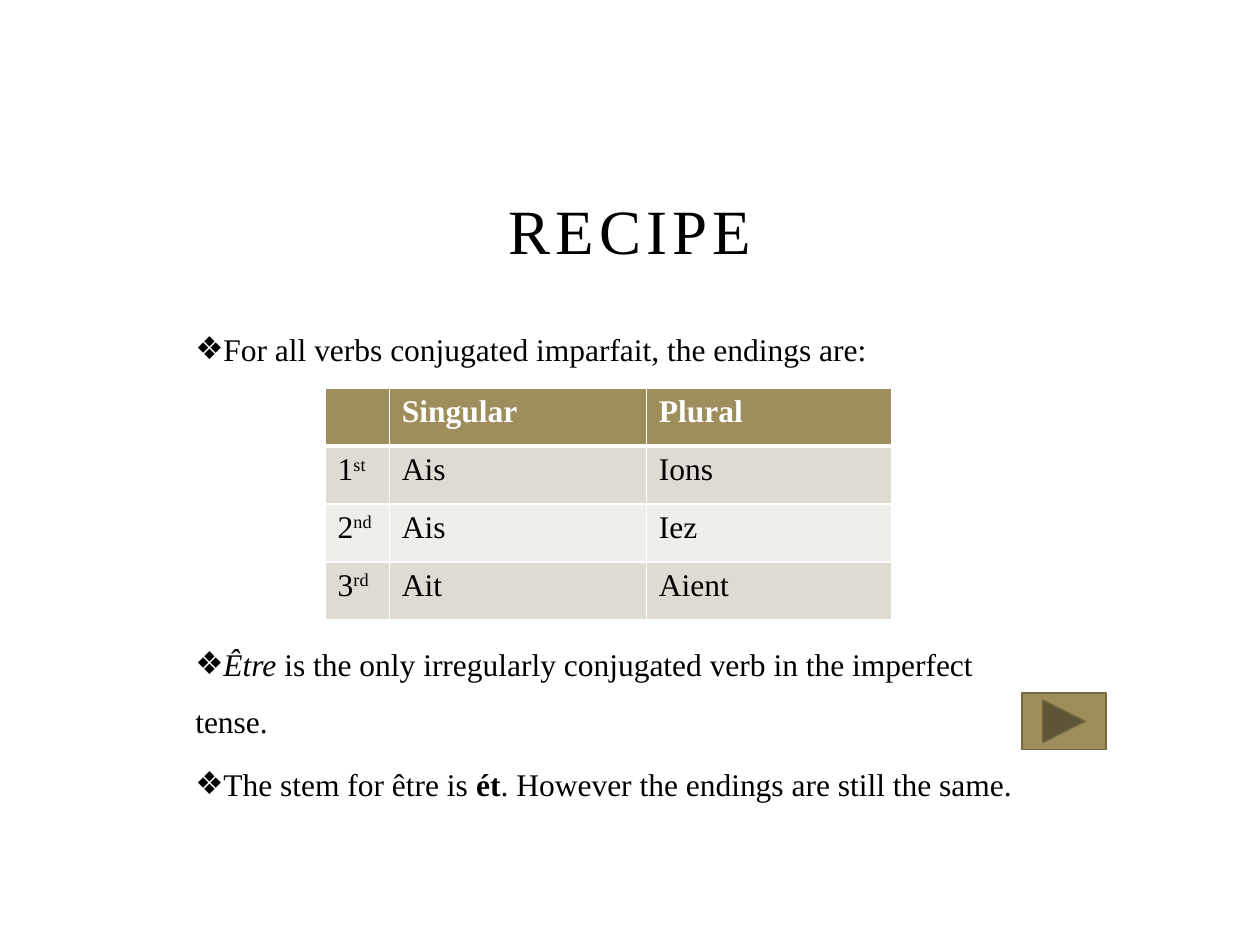
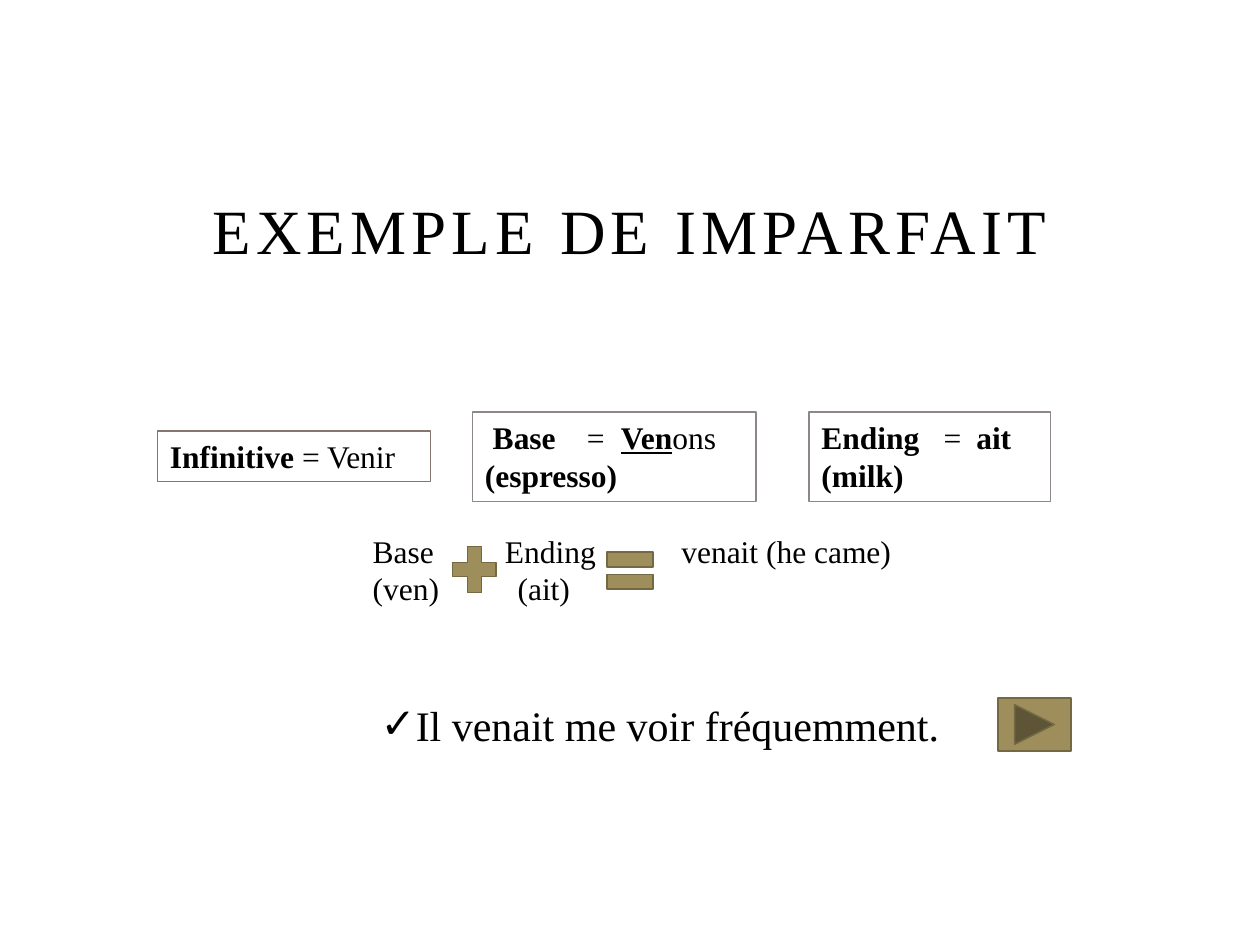
from lxml.etree import SubElement
from pptx import Presentation
from pptx.dml.color import RGBColor
from pptx.enum.shapes import MSO_SHAPE
from pptx.enum.text import MSO_ANCHOR, MSO_AUTO_SIZE, PP_ALIGN
from pptx.oxml.ns import qn
from pptx.util import Inches, Pt

COLORS = {
    "text": "000000", "white": "FFFFFF", "gold": "9E8E5C", "edge": "756944",
    "dark": "DFDBD2", "light": "F0EEEA", "gray": "8D878B", "brown": "85776D",
}
FONT = "Times New Roman"


def color(name):
    return RGBColor.from_string(COLORS[name])


def place(shape, left, top, width, height):
    shape.left, shape.top = Inches(left), Inches(top)
    shape.width, shape.height = Inches(width), Inches(height)


def write(para, runs, size=18, ink="text"):
    """Add (text, marks) runs; marks: b bold, i italic, u underline, ^ superscript."""
    for text, marks in runs:
        run = para.add_run()
        run.text = text
        font = run.font
        font.name, font.size = FONT, Pt(size)
        font.color.rgb = color(ink)
        font.bold, font.italic, font.underline = (m in marks for m in "biu")
        if "^" in marks:
            run._r.get_or_add_rPr().set("baseline", "30000")


def set_bullet(para, char, left, indent):
    props = para._p.get_or_add_pPr()
    props.set("marL", str(Inches(left)))
    props.set("indent", str(Inches(indent)))
    SubElement(props, qn("a:buChar"), char=char)


def set_tabs(para, stops):
    tabs = SubElement(para._p.get_or_add_pPr(), qn("a:tabLst"))
    for stop in stops:
        SubElement(tabs, qn("a:tab"), pos=str(Inches(stop)), algn="l")


def new_slide(prs, title):
    """Add a slide with its title and return it with the body placeholder."""
    slide = prs.slides.add_slide(prs.slide_layouts[1])
    head, body = slide.placeholders
    place(head, 1.5, 1.42, 7, 0.75)
    frame = head.text_frame
    frame.auto_size = MSO_AUTO_SIZE.NONE
    frame.vertical_anchor = MSO_ANCHOR.BOTTOM
    para = frame.paragraphs[0]
    para.alignment = PP_ALIGN.CENTER
    write(para, [(title, "")], 36)
    para.runs[0]._r.get_or_add_rPr().set("spc", "300")
    body.text_frame.auto_size = MSO_AUTO_SIZE.NONE
    return slide, body


def add_icon(slide, kind, *box):
    icon = slide.shapes.add_shape(kind, *map(Inches, box))
    icon.shadow.inherit = False
    icon.fill.solid()
    icon.fill.fore_color.rgb = color("gold")
    icon.line.color.rgb = color("edge")
    icon.line.width = Pt(0.85)


def fill_lines(shape, lines):
    """Write lines of (runs, tab stops) into a shape."""
    frame = shape.text_frame
    frame.word_wrap = True
    frame.auto_size = MSO_AUTO_SIZE.SHAPE_TO_FIT_TEXT
    frame.vertical_anchor = MSO_ANCHOR.TOP
    for row, (runs, stops) in enumerate(lines):
        para = frame.add_paragraph() if row else frame.paragraphs[0]
        para.alignment = PP_ALIGN.LEFT
        if stops:
            set_tabs(para, stops)
        write(para, runs)


def add_box(slide, box, edge, lines):
    shape = slide.shapes.add_shape(MSO_SHAPE.RECTANGLE, *map(Inches, box))
    shape.shadow.inherit = False
    shape.fill.background()
    shape.line.color.rgb = color(edge)
    shape.line.width = Pt(0.75)
    fill_lines(shape, lines)


def set_borders(cell, row):
    props = cell._tc.get_or_add_tcPr()
    widths = {"L": 1, "R": 1, "T": 3 if row == 1 else 1, "B": 3 if row == 0 else 1}
    for side, width in widths.items():
        line = SubElement(props, qn("a:ln" + side), w=str(Pt(width)))
        fill = SubElement(line, qn("a:solidFill"))
        SubElement(fill, qn("a:srgbClr"), val=COLORS["white"])


def add_endings(slide):
    rows = [
        [[], [("Singular", "b")], [("Plural", "b")]],
        [[("1", ""), ("st", "^")], [("Ais", "")], [("Ions", "")]],
        [[("2", ""), ("nd", "^")], [("Ais", "")], [("Iez", "")]],
        [[("3", ""), ("rd", "^")], [("Ait", "")], [("Aient", "")]],
    ]
    box = map(Inches, (2.58, 3.08, 4.5, 1.84))
    table = slide.shapes.add_table(4, 3, *box).table
    for col, width in zip(table.columns, (0.51, 2.04, 1.95)):
        col.width = Inches(width)
    for r, row in enumerate(rows):
        shade = "gold" if r == 0 else "dark" if r % 2 else "light"
        for c, runs in enumerate(row):
            cell = table.cell(r, c)
            set_borders(cell, r)
            cell.fill.solid()
            cell.fill.fore_color.rgb = color(shade)
            write(cell.text_frame.paragraphs[0], runs, ink="text" if r else "white")


def recipe(prs):
    slide, body = new_slide(prs, "RECIPE")
    place(body, 1.45, 2.42, 7, 3.83)
    points = [
        (0, [("For all verbs conjugated imparfait, the endings are:", "")]),
        (147.6, [("Être", "i"),
                 (" is the only irregularly conjugated verb in the imperfect tense.", "")]),
        (3.6, [("The stem for être is ", ""), ("ét", "b"),
               (". However the endings are still the same.", "")]),
    ]
    frame = body.text_frame
    for i, (gap, runs) in enumerate(points):
        para = frame.add_paragraph() if i else frame.paragraphs[0]
        set_bullet(para, "❖", 0, -0.3)
        para.line_spacing = 1.5
        para.space_before = Pt(gap)
        write(para, runs)
    add_endings(slide)
    add_icon(slide, MSO_SHAPE.ACTION_BUTTON_FORWARD_OR_NEXT, 8.11, 5.5, 0.67, 0.45)


def example(prs):
    slide, body = new_slide(prs, "EXEMPLE DE IMPARFAIT")
    add_box(slide, (3.75, 3.27, 2.25, 0.71), "gray", [
        ([(" Base\t", "b"), ("=\t", ""), ("Ven", "bu"), ("ons", "")], (0.81, 1.08)),
        ([("(espresso)", "b")], ()),
    ])
    add_box(slide, (6.42, 3.27, 1.92, 0.71), "gray", [
        ([("Ending\t", "b"), ("=\t", ""), ("ait", "b")], (0.97, 1.23)),
        ([("(milk)", "b")], ()),
    ])
    add_box(slide, (1.25, 3.42, 2.17, 0.4), "brown", [
        ([("Infinitive ", "b"), ("= Venir", "")], ()),
    ])
    total = slide.shapes.add_textbox(*map(Inches, (2.86, 4.17, 5.47, 0.71)))
    fill_lines(total, [
        ([("Base\tEnding\tvenait (he came)", "")], (1.05, 2.45)),
        ([("(ven)\t(ait)", "")], (1.15,)),
    ])
    place(body, 0.92, 5.1, 6.83, 0.88)
    body.text_frame.margin_top = Inches(0.45)
    para = body.text_frame.paragraphs[0]
    set_bullet(para, "✓", 2.25, -0.25)
    para.space_before = Pt(0)
    write(para, [("Il venait me voir fréquemment.", "")], 24)
    add_icon(slide, MSO_SHAPE.ACTION_BUTTON_FORWARD_OR_NEXT, 7.92, 5.54, 0.58, 0.42)
    add_icon(slide, MSO_SHAPE.MATH_PLUS, 3.53, 4.27, 0.47, 0.5)
    add_icon(slide, MSO_SHAPE.MATH_EQUAL, 4.75, 4.28, 0.5, 0.5)


def main():
    prs = Presentation()
    prs.slide_width, prs.slide_height = Inches(10), Inches(7.5)
    recipe(prs)
    example(prs)
    prs.save("out.pptx")


if __name__ == "__main__":
    main()
